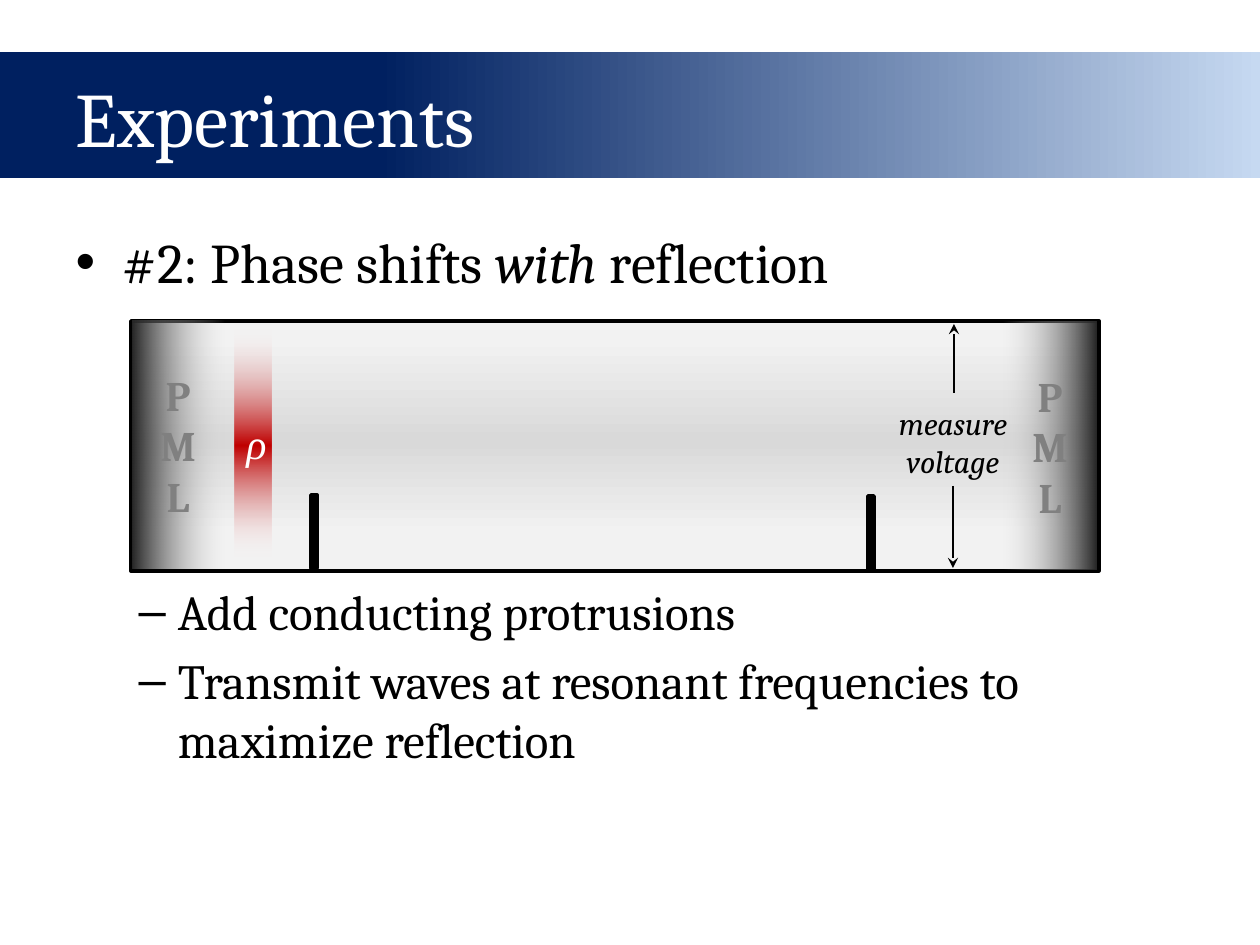
"""Build the slide on phase shifts with reflection."""
from lxml import etree
from pptx import Presentation
from pptx.dml.color import RGBColor
from pptx.enum.shapes import MSO_CONNECTOR, MSO_SHAPE
from pptx.enum.text import MSO_ANCHOR, MSO_AUTO_SIZE, PP_ALIGN
from pptx.oxml.ns import qn
from pptx.util import Emu, Pt

RECT, LINE = MSO_SHAPE.RECTANGLE, MSO_CONNECTOR.STRAIGHT
LEFT, CENTER = PP_ALIGN.LEFT, PP_ALIGN.CENTER
MIDDLE, GROW = MSO_ANCHOR.MIDDLE, MSO_AUTO_SIZE.SHAPE_TO_FIT_TEXT
SCALE = 914400 / 126
INK = {
    "navy": "002060", "sky": "C6D9F1", "white": "FFFFFF", "black": "000000",
    "pale": "F2F2F2", "mid": "D9D9D9", "dark": "262626", "gray": "808080",
    "red": "C00000",
}


def px(num):
    """Turn pixels into EMU."""
    return Emu(round(num * SCALE))


def rgb(name):
    """Look up a colour."""
    return RGBColor.from_string(INK[name])


def place(shape, box):
    """Move a shape to a box in pixels."""
    shape.left, shape.top, shape.width, shape.height = map(px, box)


def write(para, text, size=28, color="black", font="Cambria", bold=None,
          slant=None, align=None, gap=None):
    """Add a run to a paragraph and format both."""
    run = para.add_run()
    run.text = text
    face = run.font
    face.name, face.size = font, Pt(size)
    face.bold, face.italic = bold, slant
    face.color.rgb = rgb(color)
    if align is not None:
        para.alignment = align
    if gap is not None:
        para.space_before = Pt(gap)
    return run


def blend(shape, angle, stops):
    """Fill a shape with a gradient of (place, colour, opacity) stops."""
    prop = shape._element.spPr
    fill = etree.Element(qn("a:gradFill"), rotWithShape="1")
    group = etree.SubElement(fill, qn("a:gsLst"))
    for pos, name, alpha in stops:
        stop = etree.SubElement(group, qn("a:gs"), pos=str(pos * 1000))
        tint = etree.SubElement(stop, qn("a:srgbClr"), val=INK[name])
        if alpha < 100:
            etree.SubElement(tint, qn("a:alpha"), val=str(alpha * 1000))
    etree.SubElement(fill, qn("a:lin"), ang=str(angle * 60000), scaled="0")
    prop.find(qn("a:prstGeom")).addnext(fill)


def block(slide, box, fill=None, edge=None):
    """Add a rectangle with an optional solid fill and outline."""
    shape = slide.shapes.add_shape(RECT, *map(px, box))
    shape.shadow.inherit = False
    if fill:
        shape.fill.solid()
        shape.fill.fore_color.rgb = rgb(fill)
    if edge:
        shape.line.color.rgb = rgb(edge)
        shape.line.width = Pt(2)
    else:
        shape.line.fill.background()
    return shape


def layer(slide, box, angle):
    """Add an absorbing end layer with stacked letters."""
    shape = block(slide, box)
    blend(shape, angle, [(0, "dark", 100), (100, "mid", 0)])
    frame = shape.text_frame
    frame.vertical_anchor = MIDDLE
    frame._txBody.bodyPr.set("vert", "wordArtVert")
    run = write(frame.paragraphs[0], "PML", size=24, color="gray",
                bold=True, align=CENTER)
    run.font._element.set("spc", "100")


def label(slide, box, text, **form):
    """Add a text box that wraps."""
    frame = slide.shapes.add_textbox(*map(px, box)).text_frame
    frame.word_wrap, frame.auto_size = True, GROW
    write(frame.paragraphs[0], text, slant=True, **form)


def arrow(slide, *ends):
    """Add a line with a stealth head at its end."""
    link = slide.shapes.add_connector(LINE, *map(px, ends))
    link.line.color.rgb = rgb("black")
    link.line.width = Pt(1.25)
    etree.SubElement(link.line._get_or_add_ln(), qn("a:tailEnd"),
                     type="stealth")
    etree.SubElement(link._element.spPr, qn("a:effectLst"))


def banner(slide, text):
    """Fill the title and lay its band behind it."""
    band = block(slide, (0, 52, 1260, 126))
    blend(band, 0, [(30, "navy", 100), (100, "sky", 100)])
    slide.shapes._spTree.insert(2, band._element)
    title = slide.shapes.title
    place(title, (63, 38, 1134, 158))
    title.text_frame.vertical_anchor = MIDDLE
    write(title.text_frame.paragraphs[0], text, size=44, color="white",
          align=LEFT)


def points(slide):
    """Fill the list, leaving room for the drawing."""
    body = slide.placeholders[1]
    place(body, (63, 221, 1134, 704))
    frame = body.text_frame
    head = frame.paragraphs[0]
    for text, slant in (("#2: Phase shifts ", None), ("with", True),
                        (" reflection", None)):
        write(head, text, size=32, slant=slant)
    for text, gap in (
        ("Add conducting protrusions", 164),
        ("Transmit waves at resonant frequencies to maximize reflection",
         None),
    ):
        para = frame.add_paragraph()
        para.level = 1
        write(para, text, gap=gap)


def guide(slide):
    """Draw the wave guide with its source, pins and probe."""
    tube = block(slide, (131, 321, 968, 250), edge="black")
    blend(tube, 90, [(7, "pale", 100), (48, "mid", 100), (85, "pale", 100)])
    layer(slide, (132, 321, 92, 248), 0)
    layer(slide, (1004, 322, 92, 248), 180)
    beam = block(slide, (235, 325, 37, 242))
    blend(beam, 90, [(0, "white", 0), (50, "red", 100), (98, "white", 0)])
    label(slide, (234, 411, 57, 63), "ρ", size=24, color="white",
          font="Times New Roman")
    label(slide, (871, 398, 164, 89), "measure voltage", size=18,
          align=CENTER)
    arrow(slide, 954, 393, 954, 324)
    arrow(slide, 953, 486, 953, 568)
    for left, top in ((311, 495), (868, 496)):
        block(slide, (left, top, 6, 73), fill="black", edge="black")


def main():
    """Build and save the slide."""
    deck = Presentation()
    deck.slide_width, deck.slide_height = px(1260), px(945)
    slide = deck.slides.add_slide(deck.slide_layouts[1])
    banner(slide, "Experiments")
    points(slide)
    guide(slide)
    deck.save("out.pptx")


if __name__ == "__main__":
    main()
